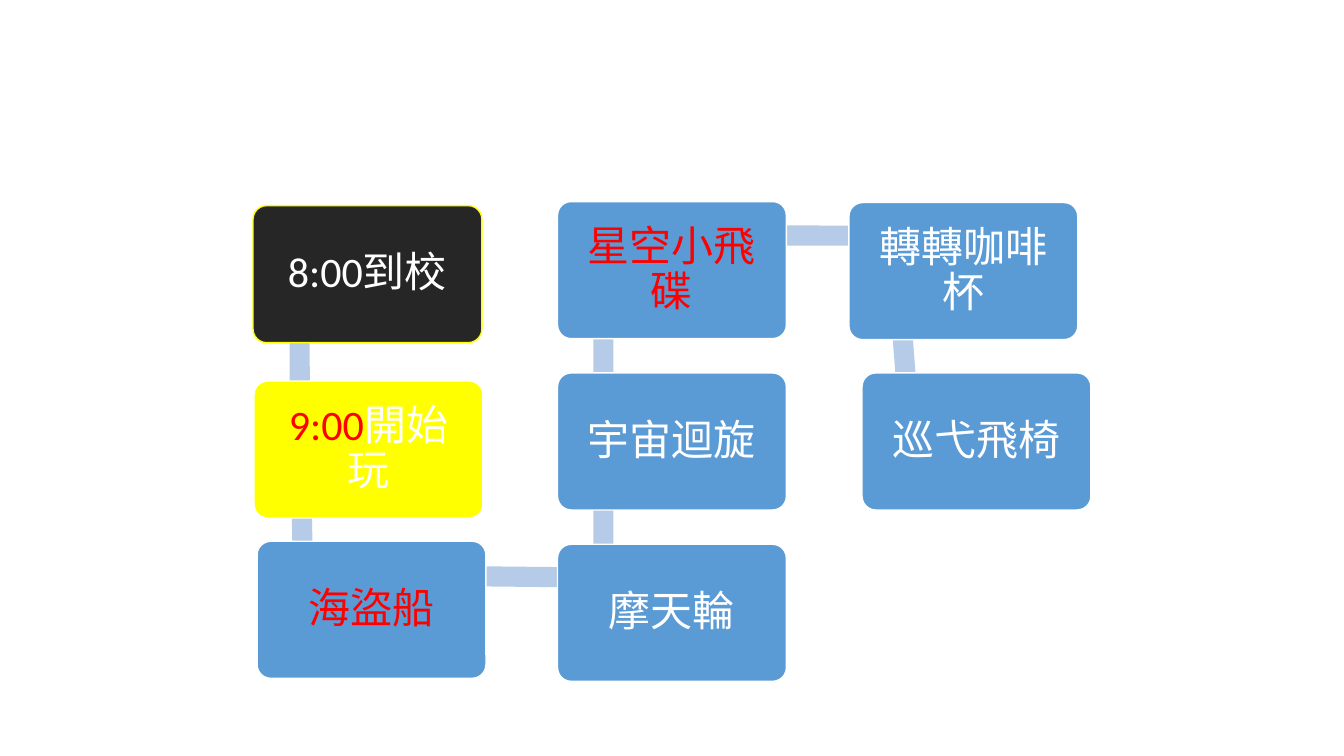
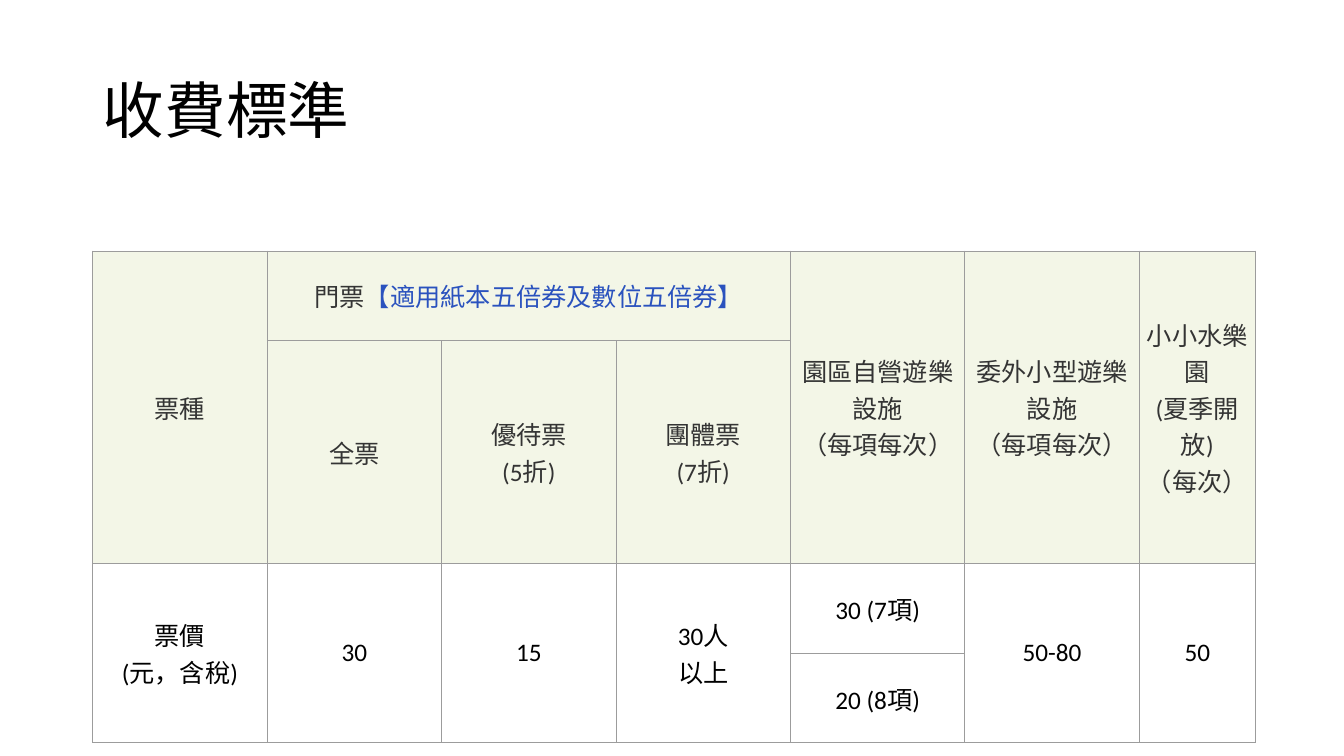
from dataclasses import dataclass
from itertools import pairwise
from math import atan2, degrees, hypot

from lxml.etree import SubElement
from pptx import Presentation
from pptx.dml.color import RGBColor
from pptx.enum.shapes import MSO_SHAPE
from pptx.enum.text import MSO_ANCHOR, PP_ALIGN
from pptx.oxml.ns import qn
from pptx.util import Pt


@dataclass(frozen=True)
class Theme:
    font: str = "Calibri"
    title: int = 44
    step: int = 30
    cell: int = 18
    black: str = "000000"
    white: str = "FFFFFF"
    red: str = "FF0000"
    yellow: str = "FFFF00"
    dark: str = "262626"
    blue: str = "5B9BD5"
    pale: str = "B5CBE7"
    gray: str = "343434"
    note: str = "2A52BE"
    cream: str = "F3F6E7"
    grid: str = "9C9C9C"


T = Theme()
PX = 9144

STEPS = [
    (251, 204, [("8:00到校", T.white)], T.dark, T.yellow),
    (252, 378, [("9:00", T.red), ("開始玩", T.white)], T.yellow, T.white),
    (255, 537, [("海盜船", T.red)], T.blue, T.white),
    (553, 540, [("摩天輪", T.white)], T.blue, T.white),
    (553, 370, [("宇宙迴旋", T.white)], T.blue, T.white),
    (553, 200, [("星空小飛碟", T.red)], T.blue, T.white),
    (842, 201, [("轉轉咖啡杯", T.white)], T.blue, T.white),
    (855, 370, [("巡弋飛椅", T.white)], T.blue, T.white),
]
BOX = (227, 136)
SHIFT = (-68, -35)
THICK = 20

TITLE = "收費標準"
COLS = [173] * 6 + [115]
ROWS = [89, 221, 89, 89]
HEAD = 2
CELLS = [
    (0, 0, 2, 1, "票種"),
    (0, 1, 1, 3, [("門票", T.gray), ("【適用紙本五倍券及數位五倍券】", T.note)]),
    (0, 4, 2, 1, "園區自營遊樂設施\n（每項每次）"),
    (0, 5, 2, 1, "委外小型遊樂設施\n（每項每次）"),
    (0, 6, 2, 1, "小小水樂園\n(夏季開放)\n（每次）"),
    (1, 1, 1, 1, "全票"),
    (1, 2, 1, 1, "優待票\n(5折)"),
    (1, 3, 1, 1, "團體票\n(7折)"),
    (2, 0, 2, 1, "票價\n(元，含稅)"),
    (2, 1, 2, 1, "30"),
    (2, 2, 2, 1, "15"),
    (2, 3, 2, 1, "30人\n以上"),
    (2, 4, 1, 1, "30 (7項)"),
    (2, 5, 2, 1, "50-80"),
    (2, 6, 2, 1, "50"),
    (3, 4, 1, 1, "20 (8項)"),
]


def px(*nums):
    return [round(n * PX) for n in nums]


def rgb(code):
    return RGBColor.from_string(code)


def write(frame, text, size, color=T.black, align=PP_ALIGN.CENTER, space=None):
    frame.word_wrap = True
    para = frame.paragraphs[0]
    para.alignment = align
    para.line_spacing = space
    parts = [(text, color)] if isinstance(text, str) else text
    for words, hue in parts:
        for num, line in enumerate(words.split("\n")):
            if num:
                para.add_line_break()
            run = para.add_run()
            run.text = line
            run.font.name = T.font
            run.font.size = Pt(size)
            run.font.color.rgb = rgb(hue)


def block(slide, kind, area, fill, line=None):
    shape = slide.shapes.add_shape(kind, *px(*area))
    shape.shadow.inherit = False
    shape.fill.solid()
    shape.fill.fore_color.rgb = rgb(fill)
    if line:
        shape.line.color.rgb = rgb(line)
        shape.line.width = Pt(1)
    else:
        shape.line.fill.background()
    return shape


def flow(deck):
    slide = deck.slides.add_slide(deck.slide_layouts[6])
    wide, high = BOX
    for (x, y, *_), (right, low, *_) in pairwise(STEPS):
        run, rise = right - x, low - y
        size = hypot(run, rise)
        mid = (x + right + wide) / 2 + SHIFT[0]
        row = (y + low + high) / 2 + SHIFT[1]
        area = (mid - size / 2, row - THICK / 2, size, THICK)
        link = block(slide, MSO_SHAPE.RECTANGLE, area, T.pale)
        link.rotation = degrees(atan2(rise, run))
    for x, y, text, fill, line in STEPS:
        box = block(slide, MSO_SHAPE.ROUNDED_RECTANGLE, (x, y, *BOX), fill, line)
        box.adjustments[0] = 0.1
        frame = box.text_frame
        frame.margin_left = frame.margin_right = px(16)[0]
        frame.margin_top = frame.margin_bottom = px(16)[0]
        frame.vertical_anchor = MSO_ANCHOR.MIDDLE
        write(frame, text, T.step, space=0.9)


def style(cell, fill):
    cell.margin_left = cell.margin_right = px(3)[0]
    cell.margin_top = cell.margin_bottom = px(3)[0]
    cell.vertical_anchor = MSO_ANCHOR.MIDDLE
    props = cell._tc.get_or_add_tcPr()
    for side in ("a:lnL", "a:lnR", "a:lnT", "a:lnB"):
        edge = SubElement(props, qn(side), w=str(Pt(0.75)))
        solid = SubElement(edge, qn("a:solidFill"))
        SubElement(solid, qn("a:srgbClr"), val=T.grid)
    cell.fill.solid()
    cell.fill.fore_color.rgb = rgb(fill)


def prices(deck):
    slide = deck.slides.add_slide(deck.slide_layouts[5])
    title = slide.shapes.title
    title.left, title.top, title.width, title.height = px(92, 40, 1150, 145)
    title.text_frame.vertical_anchor = MSO_ANCHOR.MIDDLE
    write(title.text_frame, TITLE, T.title, align=PP_ALIGN.LEFT, space=0.9)
    area = px(92, 249, sum(COLS), sum(ROWS))
    table = slide.shapes.add_table(len(ROWS), len(COLS), *area).table
    table.first_row = table.horz_banding = False
    for col, wide in zip(table.columns, COLS):
        col.width = px(wide)[0]
    for num, (row, high) in enumerate(zip(table.rows, ROWS)):
        row.height = px(high)[0]
        for cell in row.cells:
            style(cell, T.cream if num < HEAD else T.white)
    for row, col, down, over, text in CELLS:
        cell = table.cell(row, col)
        if down * over > 1:
            cell.merge(table.cell(row + down - 1, col + over - 1))
        hue = T.gray if row < HEAD else T.black
        write(cell.text_frame, text, T.cell, color=hue)


def main():
    deck = Presentation()
    deck.slide_width, deck.slide_height = px(1333, 750)
    flow(deck)
    prices(deck)
    deck.save("out.pptx")


if __name__ == "__main__":
    main()
